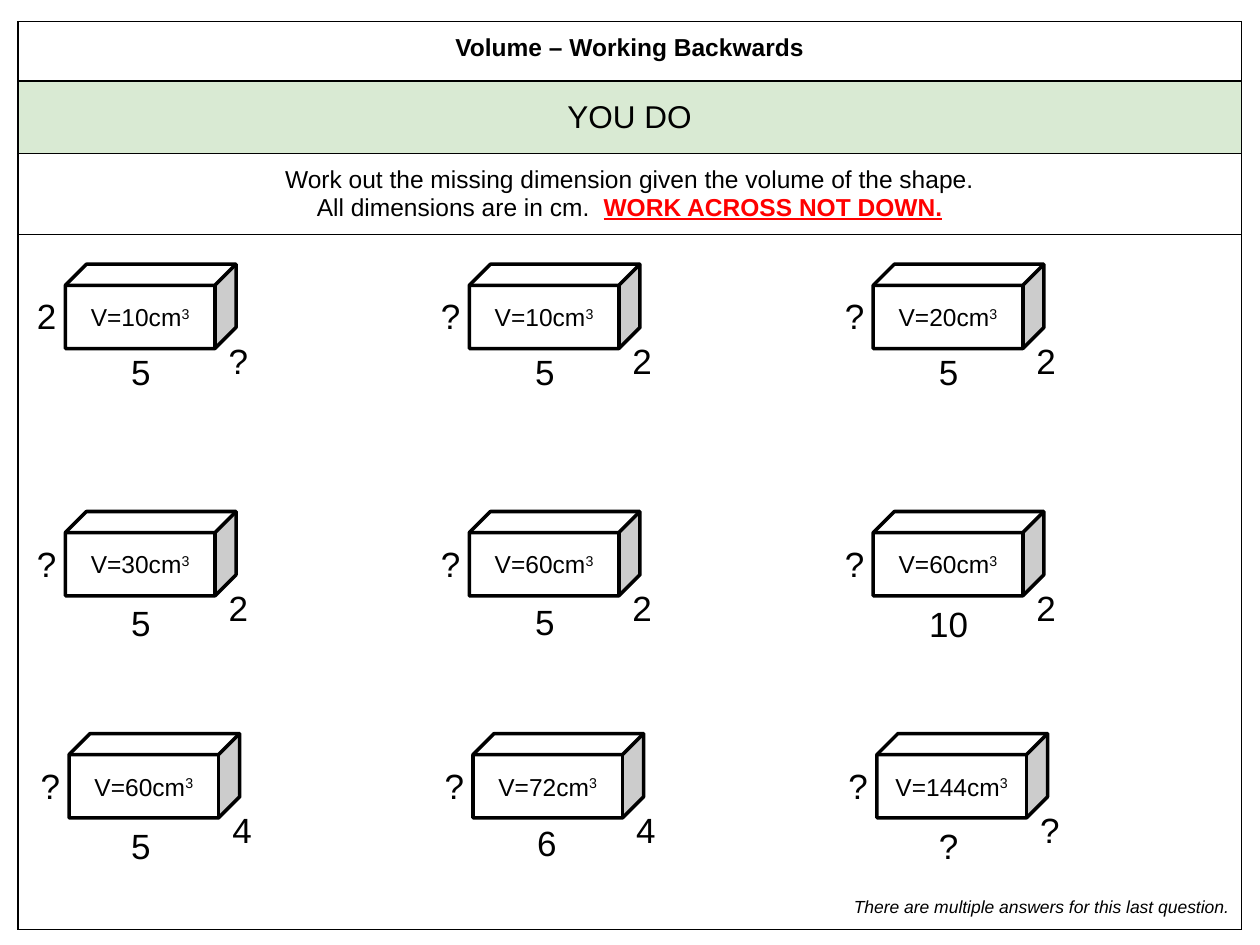
from lxml.etree import SubElement
from pptx import Presentation
from pptx.dml.color import RGBColor
from pptx.enum.shapes import MSO_SHAPE
from pptx.enum.text import MSO_ANCHOR, PP_ALIGN
from pptx.oxml.ns import qn
from pptx.util import Pt


def color(hex_string):
    return RGBColor.from_string(hex_string)


def add_text(para, text, size=14, ink="000000", bold=False, italic=False,
             underline=False, superscript=False, align=PP_ALIGN.CENTER):
    para.alignment = align
    span = para.add_run()
    span.text = text
    span.font.name = "Arial"
    span.font.size = Pt(size)
    span.font.color.rgb = color(ink)
    span.font.bold = bold
    span.font.italic = italic
    span.font.underline = underline
    if superscript:
        span.font._element.set("baseline", "30000")


deck = Presentation()
deck.slide_width, deck.slide_height = Pt(720), Pt(540)
page = deck.slides.add_slide(deck.slide_layouts[6])

# Worksheet frame: one column, four rows
row_heights = [34, 41.5, 46, 397.5]
table = page.shapes.add_table(4, 1, Pt(10.3), Pt(12.3), Pt(699),
                              Pt(sum(row_heights))).table
table.first_row = table.horz_banding = False
fills = ["FFFFFF", "D9EAD3", "FFFFFF", "FFFFFF"]
anchors = [MSO_ANCHOR.TOP, MSO_ANCHOR.MIDDLE, MSO_ANCHOR.MIDDLE, MSO_ANCHOR.BOTTOM]
cells = [row.cells[0] for row in table.rows]
for row, cell, height, fill, anchor in zip(table.rows, cells, row_heights, fills, anchors):
    row.height = Pt(height)
    cell.vertical_anchor = anchor
    cell.margin_left = cell.margin_right = cell.margin_top = cell.margin_bottom = Pt(7.2)
    properties = cell._tc.get_or_add_tcPr()
    for side in ("a:lnL", "a:lnR", "a:lnT", "a:lnB"):
        border = SubElement(properties, qn(side), w=str(Pt(0.75)))
        SubElement(SubElement(border, qn("a:solidFill")), qn("a:srgbClr"), val="000000")
    cell.fill.solid()
    cell.fill.fore_color.rgb = color(fill)

heading, section, task, footnote = [cell.text_frame for cell in cells]
add_text(heading.paragraphs[0], "Volume – Working Backwards", bold=True)
add_text(section.paragraphs[0], "YOU DO", size=18)
add_text(task.paragraphs[0],
         "Work out the missing dimension given the volume of the shape.")
second_line = task.add_paragraph()
add_text(second_line, "All dimensions are in cm.  ")
add_text(second_line, "WORK ACROSS NOT DOWN.", ink="FF0000", bold=True, underline=True)
add_text(footnote.paragraphs[0], "There are multiple answers for this last question.",
         size=10, italic=True, align=PP_ALIGN.RIGHT)

# Cuboids: (left, top) of each row, then volume, height, depth, width
# and how far the width label sits below the cuboid's top
column_step = 230.8
cuboid_rows = [
    (37.4, 151, [(10, "2", "?", "5", 45.5), (10, "?", "2", "5", 45.5),
                 (20, "?", "2", "5", 45.5)]),
    (37.4, 292.3, [(30, "?", "2", "5", 47.8), (60, "?", "2", "5", 47),
                   (60, "?", "2", "10", 48.5)]),
    (39.5, 419.2, [(60, "?", "4", "5", 48.3), (72, "?", "4", "6", 46.7),
                   (144, "?", "?", "?", 48.3)]),
]
for row_left, top, cuboids in cuboid_rows:
    for column, (volume, height, depth, width, drop) in enumerate(cuboids):
        left = row_left + column * column_step
        cuboid = page.shapes.add_shape(MSO_SHAPE.CUBE, Pt(left), Pt(top), Pt(97.5), Pt(48.2))
        cuboid.shadow.inherit = False
        cuboid.fill.solid()
        cuboid.fill.fore_color.rgb = color("FFFFFF")
        cuboid.line.color.rgb = color("000000")
        cuboid.line.width = Pt(2)
        cuboid.text_frame.vertical_anchor = MSO_ANCHOR.MIDDLE
        label = cuboid.text_frame.paragraphs[0]
        add_text(label, f"V={volume}cm")
        add_text(label, "3", superscript=True)

        # Dimension labels, centred on their x position
        width_center = 80.5 + column * column_step + (1.2 if width == "6" else 0)
        for text, center, label_top, box_width in [
            (height, left - 10.7, top + 14, 26),
            (depth, left + 98.8, top + 39.3, 26),
            (width, width_center, top + drop, 37 if len(width) > 1 else 26),
        ]:
            box = page.shapes.add_textbox(Pt(center - box_width / 2), Pt(label_top),
                                          Pt(box_width), Pt(31.5))
            box.text_frame.word_wrap = False
            add_text(box.text_frame.paragraphs[0], text, size=20)

deck.save("out.pptx")
